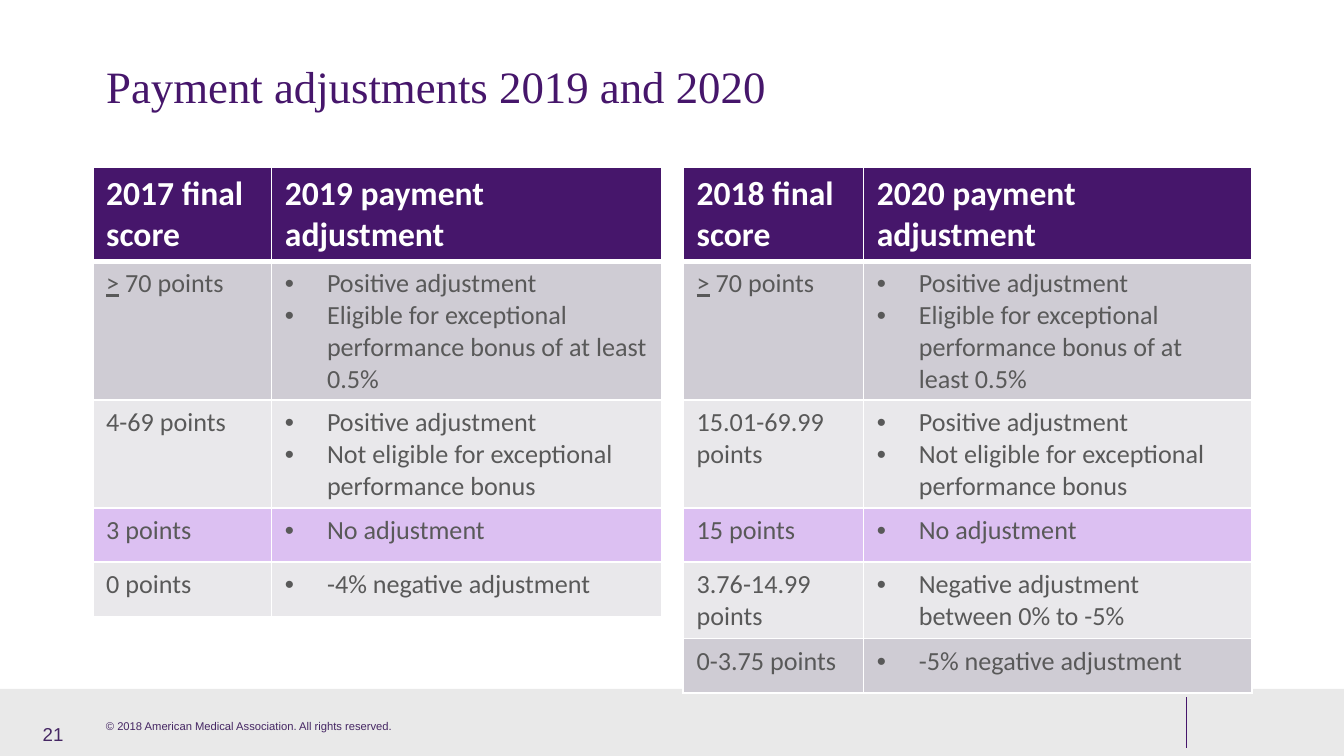
from lxml import etree
from pptx import Presentation
from pptx.dml.color import RGBColor
from pptx.enum import shapes, text
from pptx.oxml import ns
from pptx.util import Pt

COLORS = {
    "purple": "46166B", "footer": "452663", "band": "E0E0E0", "white": "FFFFFF",
    "body": "595959", "dark": "CFCCD4", "light": "E9E8EB", "lilac": "DCC0F2",
}


def write(para, content, font="Calibri", size=14, color="body", bold=False, underline=False):
    span = para.add_run()
    span.text = content
    span.font.name = font
    span.font.size = Pt(size)
    span.font.bold = bold
    span.font.underline = underline
    span.font.color.rgb = RGBColor.from_string(COLORS[color])


def add_xml(parent, tag, **attributes):
    return etree.SubElement(parent, ns.qn(tag), attributes)


deck = Presentation()
deck.slide_width, deck.slide_height = Pt(720), Pt(405)
page = deck.slides.add_slide(deck.slide_layouts[5])

band = page.shapes.add_shape(shapes.MSO_SHAPE.RECTANGLE, Pt(0), Pt(369), Pt(720), Pt(36))
band.shadow.inherit = False
band.fill.solid()
band.fill.fore_color.rgb = RGBColor.from_string(COLORS["band"])
add_xml(band.fill._xPr.find(ns.qn("a:solidFill"))[0], "a:alpha", val="70000")
band.line.fill.background()

divider = page.shapes.add_connector(shapes.MSO_CONNECTOR.STRAIGHT, Pt(635.5), Pt(373.5), Pt(635.5), Pt(401))
divider.line.color.rgb = RGBColor.from_string(COLORS["purple"])
divider.line.width = Pt(0.5)
add_xml(divider._element.spPr, "a:effectLst")

title = page.shapes.title
title.left, title.top, title.width, title.height = Pt(49.7), Pt(10.8), Pt(620.6), Pt(70.6)
title.text_frame.vertical_anchor = text.MSO_ANCHOR.MIDDLE
title.text_frame.paragraphs[0].alignment = text.PP_ALIGN.LEFT
write(title.text_frame.paragraphs[0], "Payment adjustments 2019 and 2020", font="Times New Roman", size=24, color="purple")

footers = [
    ("© 2018 American Medical Association. All rights reserved.", 49.7, 381.6, 198.7, 14.4, 6),
    ("21", 15.8, 382.3, 72.7, 21.6, 10),
]
for content, left, top, width, height, size in footers:
    box = page.shapes.add_textbox(Pt(left), Pt(top), Pt(width), Pt(height))
    box.text_frame.word_wrap = True
    box.text_frame.vertical_anchor = text.MSO_ANCHOR.MIDDLE
    write(box.text_frame.paragraphs[0], content, font="Arial", size=size, color="footer")

bonus = ["Positive adjustment", "Eligible for exceptional performance bonus of at least 0.5%"]
no_bonus = ["Positive adjustment", "Not eligible for exceptional performance bonus"]
tables = [
    (49.7, [95.8, 208.8], [
        ("2017 final score", ["2019 payment adjustment"], "purple"),
        ("> 70 points", bonus, "dark"),
        ("4-69 points", no_bonus, "light"),
        ("3 points", ["No adjustment"], "lilac"),
        ("0 points", ["-4% negative adjustment"], "light"),
    ]),
    (366, [96.5, 208.1], [
        ("2018 final score", ["2020 payment adjustment"], "purple"),
        ("> 70 points", bonus, "dark"),
        ("15.01-69.99 points", no_bonus, "light"),
        ("15 points", ["No adjustment"], "lilac"),
        ("3.76-14.99 points", ["Negative adjustment between 0% to -5%"], "light"),
        ("0-3.75 points", ["-5% negative adjustment"], "dark"),
    ]),
]
row_height = 29.2
for left, widths, rows in tables:
    frame = page.shapes.add_table(len(rows), 2, Pt(left), Pt(89.5), Pt(sum(widths)), Pt(row_height * len(rows)))
    table = frame.table
    for column, width in zip(table.columns, widths):
        column.width = Pt(width)
    for row_index, (score, adjustments, fill) in enumerate(rows):
        table.rows[row_index].height = Pt(row_height)
        is_header = row_index == 0
        for column_index, lines in enumerate([[score], adjustments]):
            cell = table.cell(row_index, column_index)
            properties = cell._tc.get_or_add_tcPr()
            for side in "LRTB":
                thick = (is_header and side == "B") or (row_index == 1 and side == "T")
                border = add_xml(properties, f"a:ln{side}", w=str(Pt(3 if thick else 1)))
                add_xml(add_xml(border, "a:solidFill"), "a:srgbClr", val=COLORS["white"])
            cell.fill.solid()
            cell.fill.fore_color.rgb = RGBColor.from_string(COLORS[fill])
            for line_index, line in enumerate(lines):
                para = cell.text_frame.add_paragraph() if line_index else cell.text_frame.paragraphs[0]
                if is_header:
                    write(para, line, size=18, color="white", bold=True)
                    continue
                if column_index == 1:
                    bullet = para._p.get_or_add_pPr()
                    bullet.set("marL", str(Pt(22.5)))
                    bullet.set("indent", str(Pt(-22.5)))
                    add_xml(bullet, "a:buFont", typeface="Arial")
                    add_xml(bullet, "a:buChar", char="•")
                if line.startswith(">"):
                    write(para, ">", underline=True)
                    line = line[1:]
                write(para, line)

deck.save("out.pptx")
